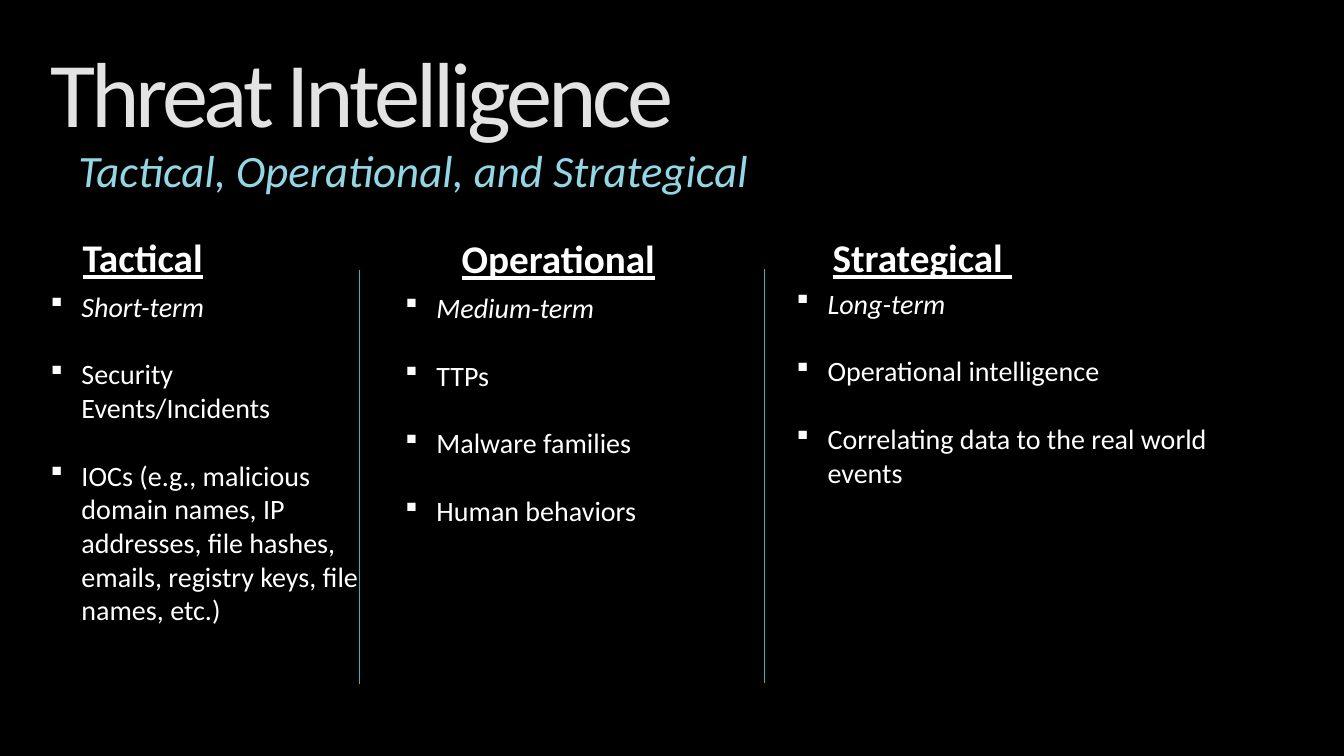
import pptx
import pptx.dml.color
import pptx.enum.shapes
import pptx.enum.text
import pptx.oxml.ns
import pptx.util
from lxml import etree

Inches = pptx.util.Inches
Pt = pptx.util.Pt
RGBColor = pptx.dml.color.RGBColor
ANCHOR = pptx.enum.text.MSO_ANCHOR
qn = pptx.oxml.ns.qn

BLACK = RGBColor(0x00, 0x00, 0x00)
WHITE = RGBColor(0xFF, 0xFF, 0xFF)
SILVER = RGBColor(0xE3, 0xE3, 0xE3)
PALE_BLUE = RGBColor(0x94, 0xD7, 0xE4)
TEAL = RGBColor(0x41, 0xAE, 0xBD)

COLUMN_WIDTH = 3.32
BULLET_INDENT = Inches(0.31)

# heading, heading left and top, list left, top, width and height, items
COLUMNS = [
    ("Tactical", 0.72, 2.27, 0.4, 2.82, COLUMN_WIDTH, 4.14,
     ["Short-term", "Security Events/Incidents",
      "IOCs (e.g., malicious domain names, IP addresses, file hashes, "
      "emails, registry keys, file names, etc.)"]),
    ("Operational", 4.48, 2.28, 3.92, 2.83, COLUMN_WIDTH, 2.79,
     ["Medium-term", "TTPs", "Malware families", "Human behaviors"]),
    ("Strategical ", 8.16, 2.27, 7.8, 2.79, 4.44, 2.46,
     ["Long-term", "Operational intelligence",
      "Correlating data to the real world events"]),
]
DIVIDERS = [(3.56, 2.68), (7.58, 2.67)]
DIVIDER_HEIGHT = 4.11


def add_text_frame(left, top, width, height, wrap=True):
    box = page.shapes.add_textbox(
        Inches(left), Inches(top), Inches(width), Inches(height))
    box.text_frame.word_wrap = wrap
    return box.text_frame


def write(para, text, size, color, bold=False, italic=False, underline=False):
    para.text = text
    font = para.font
    font.name = "Calibri"
    font.size = Pt(size)
    font.bold, font.italic, font.underline = bold, italic, underline
    font.color.rgb = color


deck = pptx.Presentation()
deck.slide_width = Inches(13.33)
deck.slide_height = Inches(7.5)
page = deck.slides.add_slide(deck.slide_layouts[6])
page.background.fill.solid()
page.background.fill.fore_color.rgb = BLACK

title = add_text_frame(0.4, 0.42, 10, 1.8, wrap=False).paragraphs[0]
title.line_spacing = 0.9
write(title, "Threat Intelligence", 66, SILVER)
title.runs[0].font._element.set("spc", "-300")

subtitle_frame = add_text_frame(0.68, 1.19, 10, 0.82)
subtitle_frame.vertical_anchor = ANCHOR.BOTTOM
subtitle = subtitle_frame.paragraphs[0]
subtitle.line_spacing = 0.9
write(subtitle, "Tactical, Operational, and Strategical", 32, PALE_BLUE, italic=True)

for heading, heading_left, heading_top, left, top, width, height, items in COLUMNS:
    heading_frame = add_text_frame(heading_left, heading_top, COLUMN_WIDTH, 0.57)
    write(heading_frame.paragraphs[0], heading, 28, WHITE, bold=True, underline=True)

    list_frame = add_text_frame(left, top, width, height)
    for index, item in enumerate(items):
        para = list_frame.add_paragraph() if index else list_frame.paragraphs[0]
        if index:
            para.space_before = Pt(24.4)
        properties = para._p.get_or_add_pPr()
        properties.set("marL", str(BULLET_INDENT))
        properties.set("indent", str(-BULLET_INDENT))
        etree.SubElement(properties, qn("a:buFont"), typeface="Wingdings")
        etree.SubElement(properties, qn("a:buChar"), char="§")
        write(para, item, 20, WHITE, italic=index == 0)

for x, top in DIVIDERS:
    divider = page.shapes.add_connector(
        pptx.enum.shapes.MSO_CONNECTOR.STRAIGHT,
        Inches(x), Inches(top), Inches(x), Inches(top + DIVIDER_HEIGHT))
    divider.line.color.rgb = TEAL
    divider.line.width = Pt(0.5)
    etree.SubElement(divider._element.spPr, qn("a:effectLst"))

deck.save("out.pptx")
